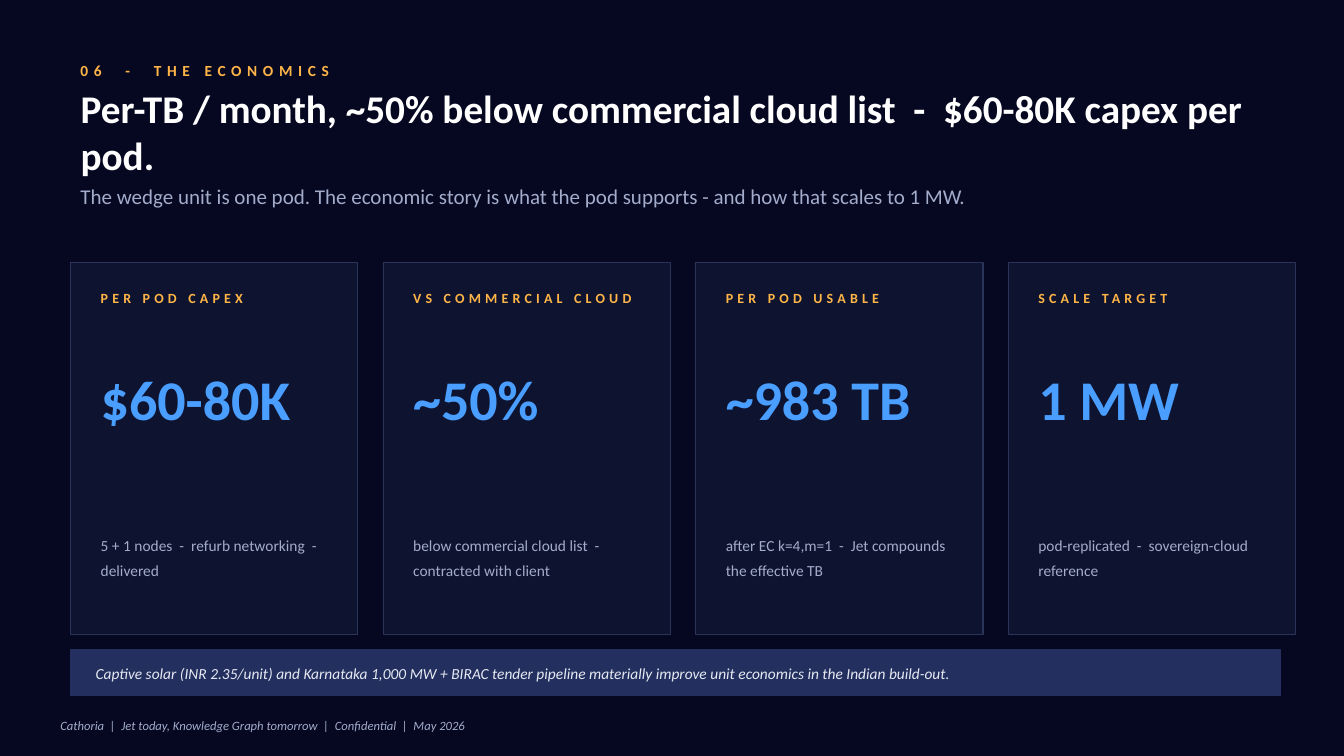
from pptx import Presentation
from pptx.dml.color import RGBColor
from pptx.enum.shapes import MSO_SHAPE
from pptx.enum.text import MSO_ANCHOR, MSO_AUTO_SIZE, PP_ALIGN
from pptx.util import Pt

KICKER = "06  -  THE ECONOMICS"
TITLE = "Per-TB / month, ~50% below commercial cloud list  -  $60-80K capex per pod."
LEAD = "The wedge unit is one pod. The economic story is what the pod supports - and how that scales to 1 MW."
CARDS = [
    ("PER POD CAPEX", "$60-80K", "5 + 1 nodes  -  refurb networking  -  delivered"),
    ("VS COMMERCIAL CLOUD", "~50%", "below commercial cloud list  -  contracted with client"),
    ("PER POD USABLE", "~983 TB", "after EC k=4,m=1  -  Jet compounds the effective TB"),
    ("SCALE TARGET", "1 MW", "pod-replicated  -  sovereign-cloud reference"),
]
NOTE = ("Captive solar (INR 2.35/unit) and Karnataka 1,000 MW + BIRAC tender pipeline "
        "materially improve unit economics in the Indian build-out.")
FOOTER = "Cathoria  |  Jet today, Knowledge Graph tomorrow  |  Confidential  |  May 2026"

NAVY = RGBColor(0x05, 0x08, 0x20)
PANEL = RGBColor(0x0E, 0x14, 0x30)
EDGE = RGBColor(0x2A, 0x33, 0x58)
BAND = RGBColor(0x23, 0x30, 0x5F)
AMBER = RGBColor(0xFF, 0xB5, 0x47)
BLUE = RGBColor(0x4A, 0x9E, 0xFF)
MUTED = RGBColor(0xA4, 0xAC, 0xCB)
PALE = RGBColor(0xE6, 0xE9, 0xF2)
WHITE = RGBColor(0xFF, 0xFF, 0xFF)

RECT = MSO_SHAPE.RECTANGLE
MIDDLE = MSO_ANCHOR.MIDDLE
FIXED = MSO_AUTO_SIZE.NONE
LEFT = PP_ALIGN.LEFT

PX = 9144
EDGE_X = 70
CARD_Y, CARD_W, CARD_H, GAP = 260, 285, 370, 25
PAD = 20


def scale(*box):
    return [n * PX for n in box]


def write(shape, text, size, color, bold=False, italic=False, track=0, lead=None):
    frame = shape.text_frame
    frame.word_wrap = True
    frame.auto_size = FIXED
    frame.vertical_anchor = MIDDLE
    frame.text = text
    para = frame.paragraphs[0]
    para.alignment = LEFT
    if lead:
        para.line_spacing = Pt(lead)
    font = para.font
    font.name = "Calibri"
    font.size = Pt(size)
    font.color.rgb = color
    font.bold = bold
    font.italic = italic
    if track:
        para.runs[0]._r.get_or_add_rPr().set("spc", str(track * 100))


def label(slide, box, *args, **style):
    write(slide.shapes.add_textbox(*scale(*box)), *args, **style)


def panel(slide, box, fill, line, width):
    shape = slide.shapes.add_shape(RECT, *scale(*box))
    shape.shadow.inherit = False
    shape.fill.solid()
    shape.fill.fore_color.rgb = fill
    shape.line.color.rgb = line
    shape.line.width = Pt(width)


def main():
    deck = Presentation()
    deck.slide_width, deck.slide_height = scale(1333, 750)
    slide = deck.slides.add_slide(deck.slide_layouts[5])
    slide.background.fill.solid()
    slide.background.fill.fore_color.rgb = NAVY

    label(slide, (EDGE_X, 55, 800, 30), KICKER, 11, AMBER, bold=True, track=4)
    title = slide.shapes.title
    title.left, title.top, title.width, title.height = scale(EDGE_X, 95, 1200, 70)
    write(title, TITLE, 28, WHITE, bold=True)
    label(slide, (EDGE_X, 170, 1200, 50), LEAD, 15, MUTED)

    for i, (head, value, detail) in enumerate(CARDS):
        x = EDGE_X + i * (CARD_W + GAP)
        panel(slide, (x, CARD_Y, CARD_W, CARD_H), PANEL, EDGE, 0.75)
        left, wide = x + PAD, CARD_W - 2 * PAD
        label(slide, (left, CARD_Y + 18, wide, 35), head, 10, AMBER, bold=True, track=3)
        label(slide, (left, CARD_Y + 60, wide, 150), value, 40, BLUE, bold=True)
        label(slide, (left, CARD_Y + 225, wide, 130), detail, 11, MUTED, lead=18)

    panel(slide, (EDGE_X, 645, 1200, 45), BAND, BAND, 1)
    label(slide, (85, 650, 1170, 35), NOTE, 11, PALE, italic=True)
    label(slide, (50, 705, 1230, 30), FOOTER, 9, MUTED, italic=True)
    deck.save("out.pptx")


if __name__ == "__main__":
    main()
